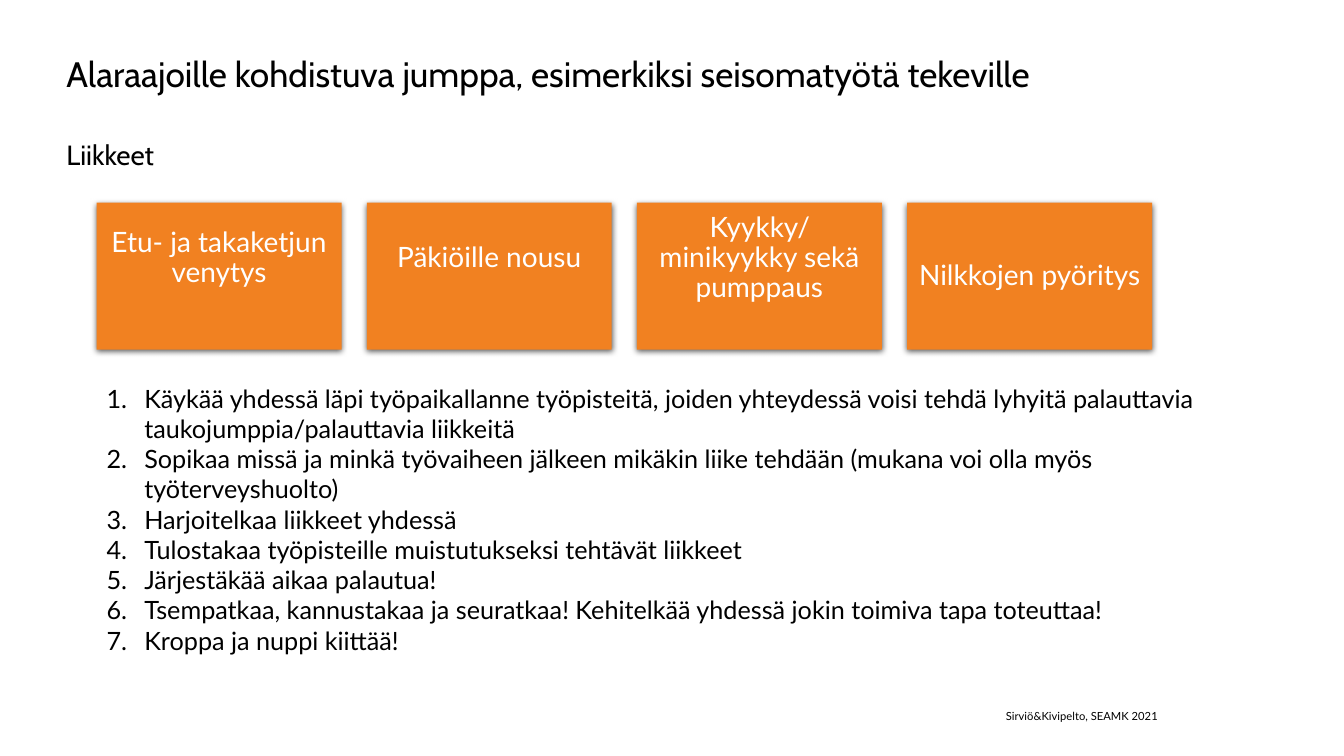
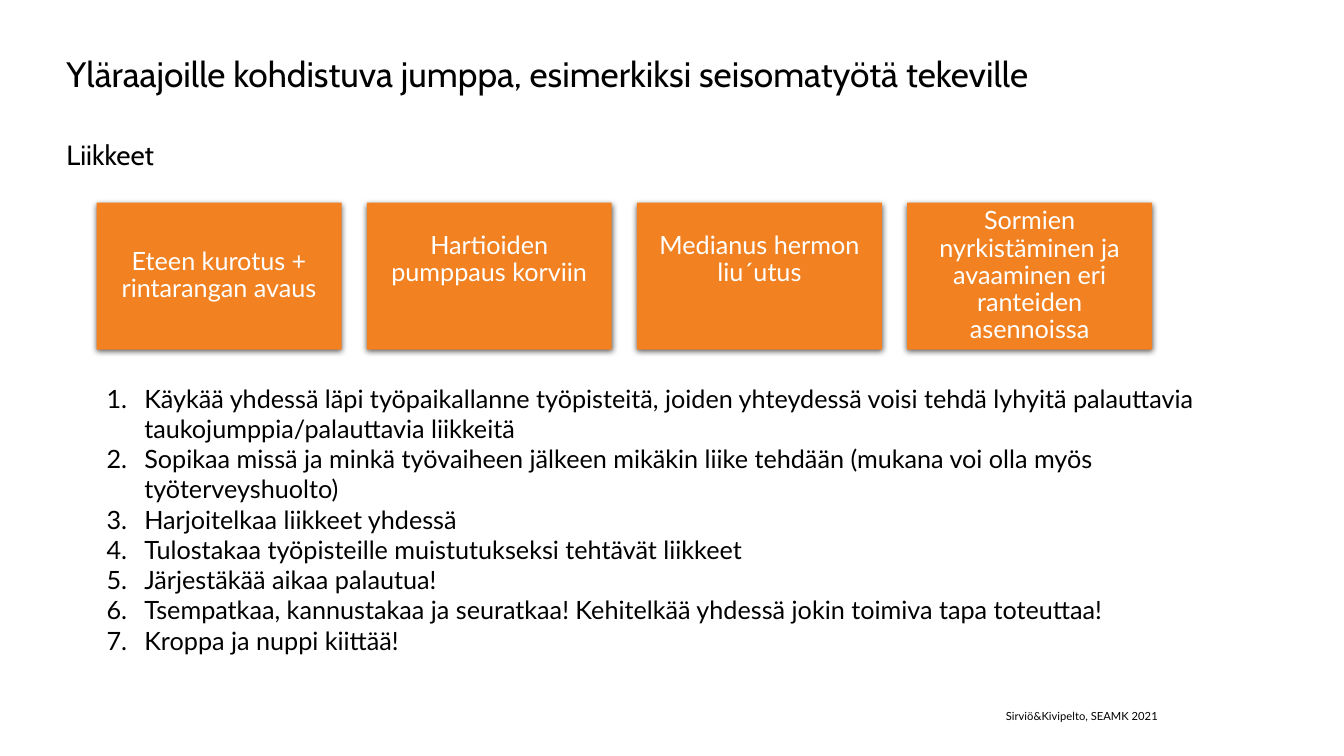
from dataclasses import dataclass

from lxml.etree import SubElement
from pptx import Presentation
from pptx.dml.color import RGBColor
from pptx.enum.shapes import MSO_SHAPE
from pptx.enum.text import MSO_ANCHOR, PP_ALIGN
from pptx.oxml.ns import qn
from pptx.util import Pt


@dataclass(frozen=True)
class Theme:
    ink: RGBColor = RGBColor(0x00, 0x00, 0x00)
    paper: RGBColor = RGBColor(0xFF, 0xFF, 0xFF)
    accent: RGBColor = RGBColor(0xF1, 0x81, 0x21)
    heading_font: str = "Cabin"
    body_font: str = "Lato"
    title_size: float = 25.2
    subtitle_size: float = 19.8
    steps_size: float = 18
    footer_size: float = 8


THEME = Theme()

# Row of movement cards
CARD_LEFT, CARD_TOP = 69, 144.7
CARD_WIDTH, CARD_HEIGHT, CARD_GAP = 175, 105, 18

SUBTITLE = "Liikkeet"
FOOTER = "Sirviö&Kivipelto, SEAMK 2021"
STEPS = [
    "Käykää yhdessä läpi työpaikallanne työpisteitä, joiden yhteydessä voisi "
    "tehdä lyhyitä palauttavia taukojumppia/palauttavia liikkeitä",
    "Sopikaa missä ja minkä työvaiheen jälkeen mikäkin liike tehdään "
    "(mukana voi olla myös työterveyshuolto)",
    "Harjoitelkaa liikkeet yhdessä",
    "Tulostakaa työpisteille muistutukseksi tehtävät liikkeet",
    "Järjestäkää aikaa palautua!",
    "Tsempatkaa, kannustakaa ja seuratkaa! Kehitelkää yhdessä jokin toimiva "
    "tapa toteuttaa!",
    "Kroppa ja nuppi kiittää!",
]

# Each movement: its text and whether it sits above the card's middle
EXERCISES = [
    {
        "title": "Alaraajoille kohdistuva jumppa, esimerkiksi seisomatyötä tekeville",
        "size": 20,
        "inset": 6,
        "lift": 12.5,
        "movements": [
            ("Etu- ja takaketjun venytys", True),
            ("Päkiöille nousu", True),
            ("Kyykky/minikyykky sekä pumppaus", True),
            ("Nilkkojen pyöritys", False),
        ],
    },
    {
        "title": "Yläraajoille kohdistuva jumppa, esimerkiksi seisomatyötä tekeville",
        "size": 18,
        "inset": 5,
        "lift": 11.5,
        "movements": [
            ("Eteen kurotus + rintarangan avaus", False),
            ("Hartioiden pumppaus korviin", True),
            ("Medianus hermon liu´utus", True),
            ("Sormien nyrkistäminen ja avaaminen eri ranteiden asennoissa", False),
        ],
    },
]


def write(paragraph, text, *, size, font=THEME.body_font, color=THEME.ink,
          align=PP_ALIGN.LEFT, line_spacing=1.0, before=0):
    paragraph.alignment = align
    paragraph.line_spacing = line_spacing
    paragraph.space_before = Pt(before)
    run = paragraph.add_run()
    run.text = text
    run.font.size = Pt(size)
    run.font.name = font
    run.font.color.rgb = color


def set_frame(frame, *, insets=(0, 0, 0, 0), anchor=MSO_ANCHOR.TOP):
    """Insets run left, top, right, bottom."""
    frame.word_wrap = True
    frame.vertical_anchor = anchor
    (frame.margin_left, frame.margin_top,
     frame.margin_right, frame.margin_bottom) = map(Pt, insets)
    return frame


def add_frame(slide, left, top, width, height, **layout):
    box = slide.shapes.add_textbox(Pt(left), Pt(top), Pt(width), Pt(height))
    return set_frame(box.text_frame, **layout)


def add_soft_shadow(shape):
    shape.shadow.inherit = False
    effects = shape.element.spPr.find(qn("a:effectLst"))
    shadow = SubElement(effects, qn("a:outerShdw"), blurRad=str(Pt(4.5)),
                        dist=str(Pt(1.5)), dir="5400000", rotWithShape="0")
    shade = SubElement(shadow, qn("a:srgbClr"), val=str(THEME.ink))
    SubElement(shade, qn("a:alpha"), val="63000")


def number_paragraph(paragraph, indent):
    properties = paragraph._p.get_or_add_pPr()
    properties.set("marL", str(Pt(indent)))
    properties.set("indent", str(-Pt(indent)))
    SubElement(properties, qn("a:buFont"), typeface="+mj-lt")
    SubElement(properties, qn("a:buAutoNum"), type="arabicPeriod")


def add_heading(slide, title):
    heading = add_frame(slide, 47.5, 37.4, 844, 87)
    write(heading.paragraphs[0], title, size=THEME.title_size,
          font=THEME.heading_font)
    write(heading.add_paragraph(), SUBTITLE, size=THEME.subtitle_size,
          font=THEME.heading_font, before=30.5)


def add_footer(slide):
    footer = add_frame(slide, 503.3, 504, 324, 14.4, anchor=MSO_ANCHOR.MIDDLE)
    write(footer.paragraphs[0], FOOTER, size=THEME.footer_size,
          align=PP_ALIGN.RIGHT)


def add_card(slide, position, movement, *, size, inset, lift):
    left = CARD_LEFT + position * (CARD_WIDTH + CARD_GAP)
    card = slide.shapes.add_shape(MSO_SHAPE.RECTANGLE, Pt(left), Pt(CARD_TOP),
                                  Pt(CARD_WIDTH), Pt(CARD_HEIGHT))
    card.fill.solid()
    card.fill.fore_color.rgb = THEME.accent
    card.line.fill.background()
    add_soft_shadow(card)
    # A deeper bottom inset raises the centred text by the lift
    label = set_frame(card.text_frame, anchor=MSO_ANCHOR.MIDDLE,
                      insets=(inset, inset, inset, inset + 2 * lift))
    write(label.paragraphs[0], movement, size=size, color=THEME.paper,
          align=PP_ALIGN.CENTER, line_spacing=0.9)


def add_steps(slide):
    steps = add_frame(slide, 69, 270, 815, 204, insets=(7.2, 3.6, 7.2, 3.6))
    for index, step in enumerate(STEPS):
        paragraph = steps.add_paragraph() if index else steps.paragraphs[0]
        number_paragraph(paragraph, 27)
        write(paragraph, step, size=THEME.steps_size)


def add_exercise_slide(deck, exercise):
    slide = deck.slides.add_slide(deck.slide_layouts[6])
    add_heading(slide, exercise["title"])
    add_footer(slide)
    for position, (movement, raised) in enumerate(exercise["movements"]):
        add_card(slide, position, movement, size=exercise["size"],
                 inset=exercise["inset"],
                 lift=exercise["lift"] if raised else 0)
    add_steps(slide)


def main():
    deck = Presentation()
    deck.slide_width, deck.slide_height = Pt(960), Pt(540)
    for exercise in EXERCISES:
        add_exercise_slide(deck, exercise)
    deck.save("out.pptx")


if __name__ == "__main__":
    main()
